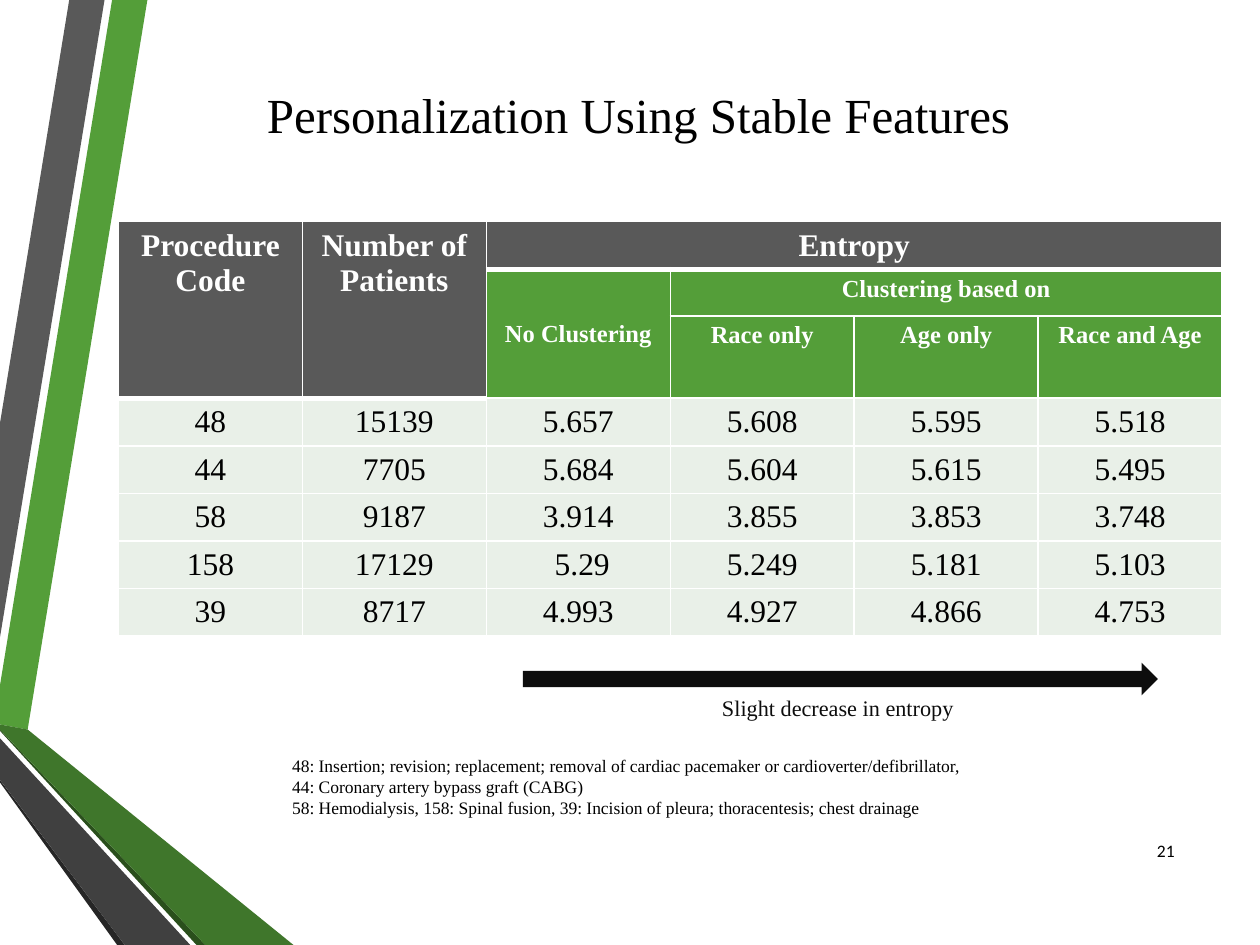
from lxml.etree import SubElement
from pptx import Presentation
from pptx.dml.color import RGBColor
from pptx.enum.shapes import MSO_SHAPE
from pptx.enum.text import MSO_ANCHOR, PP_ALIGN
from pptx.oxml.ns import qn
from pptx.util import Inches, Pt

SERIF = "Times New Roman"
GREEN, GRAY, PALE = "549E39", "595959", "E9F0E8"
WHITE, BLACK, INK = "FFFFFF", "000000", "0D0D0D"

# Ribbons along the left edge: colour and corners in inches
RIBBONS = [
    (GREEN, [(0, 5.44), (0, 5.75), (0.22, 5.79), (1.17, 0), (0.89, 0)]),
    (GRAY, [(0.83, 0), (0.55, 0), (0, 3.36), (0, 5.06)]),
    ("262626", [(0, 6.19), (0, 6.21), (0.93, 7.5), (0.99, 7.5)]),
    ("2A4F1C", [(0, 5.79), (0, 5.8), (1.56, 7.5), (1.63, 7.5)]),
    ("3F762B", [(0, 5.79), (1.63, 7.5), (2.33, 7.5), (0.22, 5.79), (0, 5.75)]),
    ("404040", [(0, 6.19), (0.99, 7.5), (1.51, 7.5), (0, 5.86)]),
]

# Header cells: text, row, column, rows spanned, columns spanned, size, fill
HEADERS = [
    ("Procedure Code", 0, 0, 3, 1, 18, GRAY),
    ("Number of Patients", 0, 1, 3, 1, 18, GRAY),
    ("Entropy", 0, 2, 1, 4, 18, GRAY),
    ("No Clustering", 1, 2, 2, 1, 14, GREEN),
    ("Clustering based on", 1, 3, 1, 3, 14, GREEN),
    ("Race only", 2, 3, 1, 1, 14, GREEN),
    ("Age only", 2, 4, 1, 1, 14, GREEN),
    ("Race and Age", 2, 5, 1, 1, 14, GREEN),
]
ENTROPY = [
    ("48", "15139", "5.657", "5.608", "5.595", "5.518"),
    ("44", "7705", "5.684", "5.604", "5.615", "5.495"),
    ("58", "9187", "3.914", "3.855", "3.853", "3.748"),
    ("158", "17129", " 5.29", "5.249", "5.181", "5.103"),
    ("39", "8717", "4.993", "4.927", "4.866", "4.753"),
]
HEADER_HEIGHTS = [0.37, 0.37, 0.65]
ROW_HEIGHT, COLUMN_WIDTH = 0.37, 1.46
TABLE_LEFT, TABLE_TOP = 0.94, 1.76

# Text boxes: lines, place, font values, alignment, anchor, inset
TEXTS = [
    (["Personalization Using Stable Features"], (2.02, 0.62, 6.27, 0.57),
     dict(name=SERIF, size=28, color=BLACK), PP_ALIGN.LEFT, MSO_ANCHOR.TOP, None),
    (["48: Insertion; revision; replacement; removal of cardiac pacemaker or cardioverter/defibrillator,",
      "44: Coronary artery bypass graft (CABG)",
      "58: Hemodialysis, 158: Spinal fusion, 39: Incision of pleura; thoracentesis; chest drainage"],
     (2.22, 5.94, 6.43, 0.61),
     dict(name=SERIF, size=10, color=BLACK), PP_ALIGN.LEFT, MSO_ANCHOR.TOP, None),
    (["Slight decrease in entropy"], (5.23, 5.47, 2.84, 0.29),
     dict(name=SERIF, size=12.7, color=INK), PP_ALIGN.CENTER, MSO_ANCHOR.MIDDLE, 0.04),
    (["21"], (8.97, 6.55, 0.45, 0.4),
     dict(name="Calibri", size=10, color=BLACK), PP_ALIGN.RIGHT, MSO_ANCHOR.MIDDLE, None),
]
ARROW = (4.15, 5.26, 5.04, 0.26)


def rgb(code):
    return RGBColor.from_string(code)


def paint(shape, color):
    shape.shadow.inherit = False
    shape.fill.solid()
    shape.fill.fore_color.rgb = rgb(color)
    shape.line.fill.background()


def write(frame, lines, values, align):
    frame.text = "\n".join(lines)
    for paragraph in frame.paragraphs:
        paragraph.alignment = align
        for run in paragraph.runs:
            for key, value in values.items():
                if key == "color":
                    run.font.color.rgb = rgb(value)
                else:
                    setattr(run.font, key, Pt(value) if key == "size" else value)


def dress(cell, color, bottom=1):
    """Give a cell white borders, then its fill."""
    properties = cell._tc.get_or_add_tcPr()
    for side, width in dict(L=1, R=1, T=1, B=bottom).items():
        border = SubElement(properties, qn(f"a:ln{side}"), w=str(Pt(width)))
        solid = SubElement(border, qn("a:solidFill"))
        SubElement(solid, qn("a:srgbClr"), val=WHITE)
    cell.fill.solid()
    cell.fill.fore_color.rgb = rgb(color)


def add_ribbons(slide):
    for color, corners in RIBBONS:
        points = [(Inches(x), Inches(y)) for x, y in corners]
        builder = slide.shapes.build_freeform(*points[0])
        builder.add_line_segments(points[1:], close=True)
        paint(builder.convert_to_shape(), color)


def add_entropy_table(slide):
    heights = HEADER_HEIGHTS + [ROW_HEIGHT] * len(ENTROPY)
    columns = len(ENTROPY[0])
    table = slide.shapes.add_table(
        len(heights), columns, Inches(TABLE_LEFT), Inches(TABLE_TOP),
        Inches(COLUMN_WIDTH * columns), Inches(sum(heights))).table
    for column in table.columns:
        column.width = Inches(COLUMN_WIDTH)
    for row, height in zip(table.rows, heights):
        row.height = Inches(height)

    # Header block
    for text, top, left, down, across, size, color in HEADERS:
        for r in range(top, top + down):
            for c in range(left, left + across):
                dress(table.cell(r, c), color, 3 if color == GRAY else 1)
        head = table.cell(top, left)
        if down * across > 1:
            head.merge(table.cell(top + down - 1, left + across - 1))
        if text == "No Clustering":
            head.vertical_anchor = MSO_ANCHOR.MIDDLE
        write(head.text_frame, [text],
              dict(name=SERIF, size=size, bold=True, color=WHITE), PP_ALIGN.CENTER)

    # Values
    for r, record in enumerate(ENTROPY, len(HEADER_HEIGHTS)):
        for c, value in enumerate(record):
            dress(table.cell(r, c), PALE)
            write(table.cell(r, c).text_frame, [value],
                  dict(name=SERIF, size=18, bold=False, color=BLACK), PP_ALIGN.CENTER)


def add_texts(slide):
    for lines, place, values, align, anchor, inset in TEXTS:
        frame = slide.shapes.add_textbox(*map(Inches, place)).text_frame
        frame.word_wrap = True
        frame.vertical_anchor = anchor
        if inset is not None:
            for side in ("left", "right", "top", "bottom"):
                setattr(frame, f"margin_{side}", Inches(inset))
        write(frame, lines, values, align)


def main():
    deck = Presentation()
    deck.slide_width, deck.slide_height = Inches(10), Inches(7.5)
    slide = deck.slides.add_slide(deck.slide_layouts[6])
    add_ribbons(slide)
    add_entropy_table(slide)
    trend = slide.shapes.add_shape(MSO_SHAPE.RIGHT_ARROW, *map(Inches, ARROW))
    paint(trend, INK)
    add_texts(slide)
    deck.save("out.pptx")


if __name__ == "__main__":
    main()
